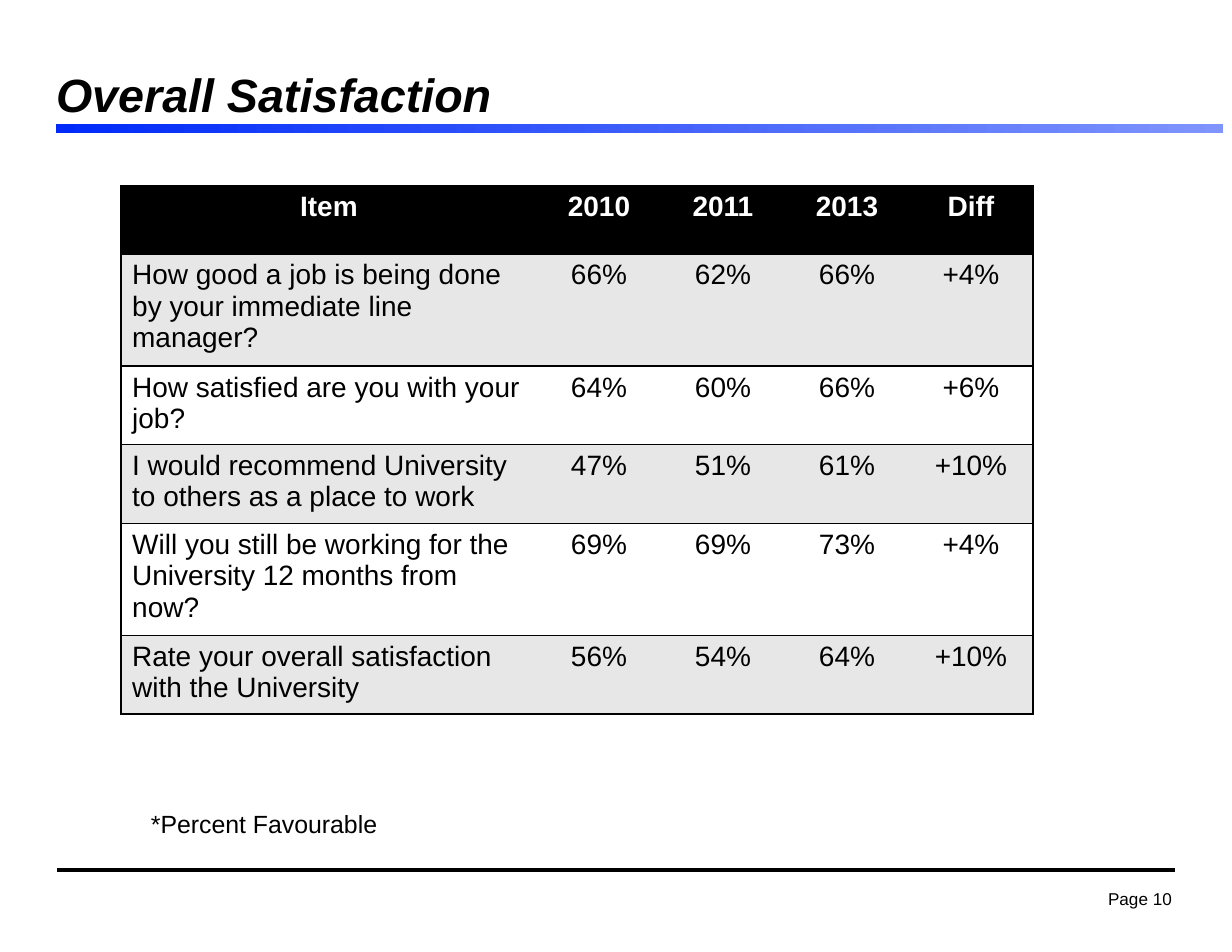
from lxml.etree import SubElement
from pptx import Presentation
from pptx.dml.color import RGBColor
from pptx.enum.shapes import MSO_CONNECTOR as Connector, MSO_SHAPE as Shape
from pptx.enum.text import MSO_ANCHOR as Anchor, PP_ALIGN as Align
from pptx.oxml.ns import qn
from pptx.util import Emu, Pt

COLORS = {"ink": "000000", "paper": "FFFFFF", "band": "E7E7E7",
          "bar_start": "002AF9", "bar_end": "7F94FC"}
FONT = "Arial"
TITLE = "Overall Satisfaction"
FOOTNOTE = "*Percent Favourable"
PAGE = "Page 10"
HEADER = ("Item", "2010", "2011", "2013", "Diff")
RESULTS = [
    ("How good a job is being done by your immediate line manager?", "66%", "62%", "66%", "+4%"),
    ("How satisfied are you with your job?", "64%", "60%", "66%", "+6%"),
    ("I would recommend University to others as a place to work", "47%", "51%", "61%", "+10%"),
    ("Will you still be working for the University 12 months from now?", "69%", "69%", "73%", "+4%"),
    ("Rate your overall satisfaction with the University", "56%", "54%", "64%", "+10%"),
]
COLUMN_WIDTHS = [416] + [124] * 4
ROW_HEIGHTS = [68, 105, 74, 79, 105, 78]


def px(n):
    return Emu(n * 914400 // 112)


def rgb(name):
    return RGBColor.from_string(COLORS[name])


def write(frame, text, size, color="ink", align=Align.LEFT, bold=False, italic=False):
    paragraph = frame.paragraphs[0]
    paragraph.alignment = align
    run = paragraph.add_run()
    run.text = text
    font = run.font
    font.name, font.size, font.bold, font.italic = FONT, Pt(size), bold, italic
    font.color.rgb = rgb(color)
    return paragraph


def text_frame(slide, box, insets, anchor=Anchor.TOP):
    frame = slide.shapes.add_textbox(*map(px, box)).text_frame
    frame.word_wrap = True
    frame.vertical_anchor = anchor
    frame.margin_left = frame.margin_right = px(insets[0])
    frame.margin_top = frame.margin_bottom = px(insets[1])
    return frame


def set_borders(cell, visible):
    properties = cell._tc.get_or_add_tcPr()
    fill = properties[0]
    for side in "LRTB":
        edge = SubElement(properties, qn(f"a:ln{side}"), w=str(Pt(1)))
        if side in visible:
            paint = SubElement(edge, qn("a:solidFill"))
            SubElement(paint, qn("a:srgbClr"), val=COLORS["ink"])
        else:
            SubElement(edge, qn("a:noFill"))
    properties.append(fill)


def add_results(slide):
    rows = [HEADER] + RESULTS
    table = slide.shapes.add_table(
        len(rows), len(HEADER), px(121), px(186),
        px(sum(COLUMN_WIDTHS)), px(sum(ROW_HEIGHTS))).table
    table.horz_banding = False
    for column, width in zip(table.columns, COLUMN_WIDTHS):
        column.width = px(width)
    for r, (values, height) in enumerate(zip(rows, ROW_HEIGHTS)):
        table.rows[r].height = px(height)
        background = "ink" if r == 0 else ("paper", "band")[r % 2]
        for c, value in enumerate(values):
            cell = table.cell(r, c)
            cell.fill.solid()
            cell.fill.fore_color.rgb = rgb(background)
            is_question = r > 0 and c == 0
            write(cell.text_frame, value, 18, "ink" if r else "paper",
                  Align.LEFT if is_question else Align.CENTER, bold=r == 0)
            outer = {0: "L", len(HEADER) - 1: "R"}.get(c, "")
            set_borders(cell, "TB" + outer)


def add_rules(slide):
    rule = slide.shapes.add_connector(Connector.STRAIGHT, px(57), px(870), px(1175), px(870))
    rule.line.color.rgb = rgb("ink")
    rule.line.width = Pt(2)
    SubElement(rule._element.spPr, qn("a:effectLst"))

    bar = slide.shapes.add_shape(Shape.RECTANGLE, px(56), px(124), px(1167), px(9))
    bar.shadow.inherit = False
    bar.line.fill.background()
    bar.fill.gradient()
    bar.fill.gradient_angle = 0
    for stop, name in zip(bar.fill.gradient_stops, ("bar_start", "bar_end")):
        stop.color.rgb = rgb(name)


def main():
    deck = Presentation()
    deck.slide_width, deck.slide_height = px(1232), px(952)
    slide = deck.slides.add_slide(deck.slide_layouts[6])
    add_rules(slide)
    page = write(text_frame(slide, (1093, 885, 91, 31), (12, 6)), PAGE, 11, align=Align.RIGHT)
    page.line_spacing = 0.9
    write(text_frame(slide, (56, 75, 1157, 47), (0, 0), Anchor.BOTTOM),
          TITLE, 30, bold=True, italic=True)
    add_results(slide)
    write(text_frame(slide, (140, 803, 401, 41), (11, 6)), FOOTNOTE, 16)
    deck.save("out.pptx")


if __name__ == "__main__":
    main()
